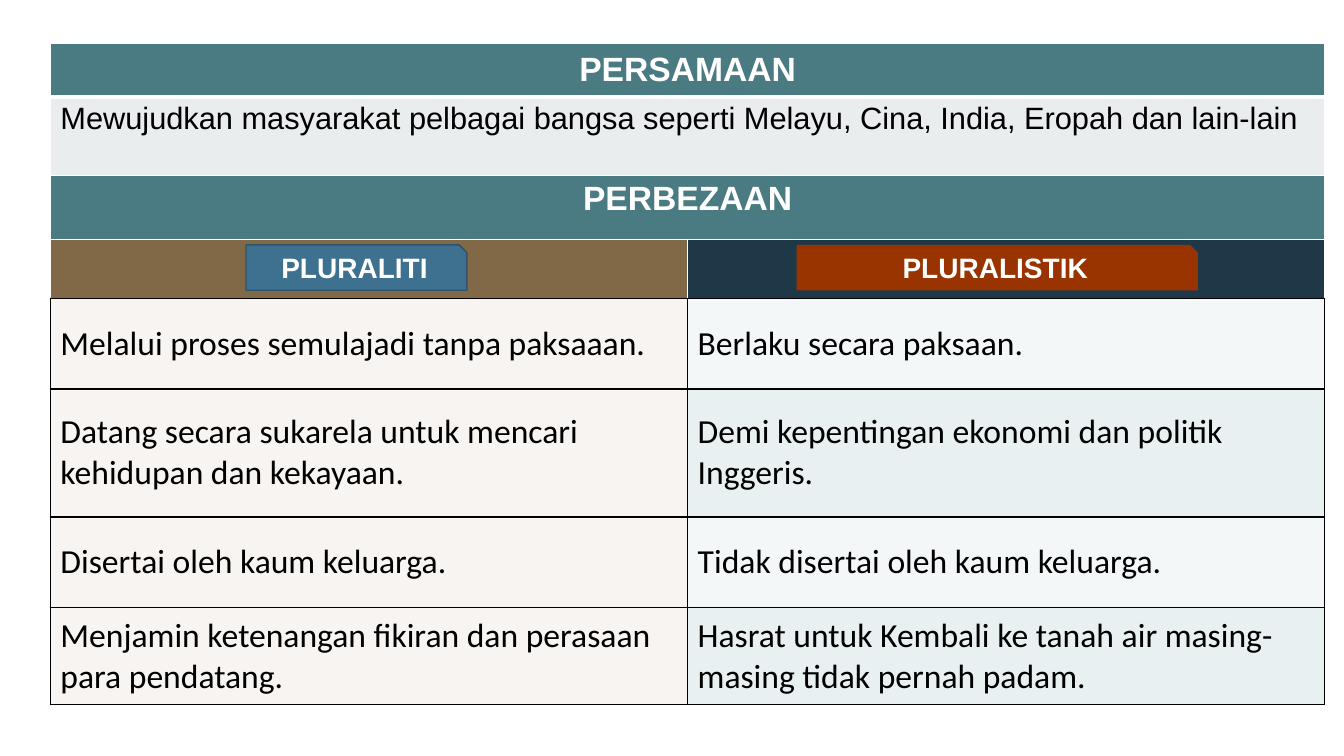
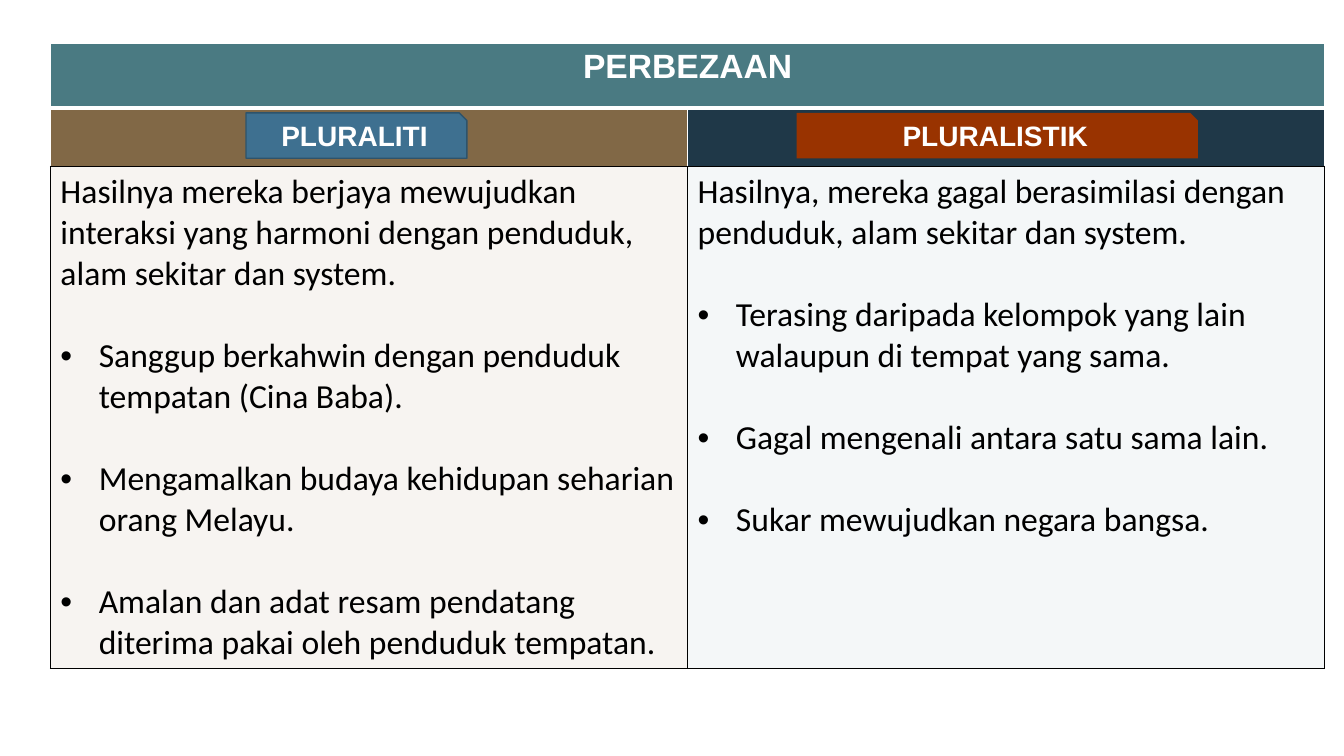
from dataclasses import dataclass, replace

from lxml.etree import SubElement
from pptx import Presentation
from pptx.dml.color import RGBColor
from pptx.enum.shapes import MSO_SHAPE as Shape
from pptx.enum.text import MSO_ANCHOR as Anchor, PP_ALIGN as Align
from pptx.oxml import parse_xml
from pptx.oxml.ns import nsdecls, qn
from pptx.util import Inches, Pt

# Shared colours
WHITE = RGBColor(0xFF, 0xFF, 0xFF)
BLACK = RGBColor(0x00, 0x00, 0x00)
TEAL = RGBColor(0x4A, 0x7A, 0x82)
GREY = RGBColor(0xE9, 0xED, 0xEE)
BROWN = RGBColor(0x81, 0x68, 0x46)
NAVY = RGBColor(0x1F, 0x38, 0x48)
CREAM = RGBColor(0xF7, 0xF4, 0xF1)
PALE = RGBColor(0xF4, 0xF7, 0xF8)
MIST = RGBColor(0xE8, 0xF0, 0xF1)
BLUE = RGBColor(0x3E, 0x70, 0x90)
BLUE_EDGE = RGBColor(0x2E, 0x53, 0x6B)
RUST = RGBColor(0x99, 0x33, 0x00)

# Shared grid, in inches
LEFT, TOP, COL_W = 0.5, 0.43, 6.32
TAG_ROW_H, TAG_H, TAG_INSET = 0.58, 0.45, 0.05
BULLET_INDENT = 0.38
BLANK_LINE = 29.3  # points: one line of 24 pt Calibri


@dataclass(frozen=True)
class Cell:
    fill: RGBColor
    lead: str = ""
    bullets: tuple[str, ...] = ()
    font: str = "Calibri"
    size: int = 24
    color: RGBColor = BLACK
    bold: bool = False
    align: Align = Align.LEFT
    anchor: Anchor = Anchor.TOP
    edge: RGBColor = BLACK
    bottom: RGBColor = BLACK
    bottom_pt: int = 1


@dataclass(frozen=True)
class Row:
    height: float
    cells: tuple[Cell, ...]  # a single cell spans both columns


@dataclass(frozen=True)
class Tag:
    text: str
    left: float
    width: float
    fill: RGBColor
    line: RGBColor | None = None


TAGS = (Tag("PLURALITI", 2.44, 2.19, BLUE, BLUE_EDGE),
        Tag("PLURALISTIK", 7.9, 3.98, RUST))
TAG_ROW = Row(TAG_ROW_H, tuple(Cell(c, edge=WHITE) for c in (BROWN, NAVY)))
BAND = Cell(TEAL, font="Arial", color=WHITE, bold=True, align=Align.CENTER,
            edge=WHITE, bottom=WHITE)


def compare(height: float, left: str, right: str, shade: RGBColor) -> Row:
    return Row(height, (Cell(CREAM, left, anchor=Anchor.MIDDLE),
                        Cell(shade, right, anchor=Anchor.MIDDLE)))


SLIDES = (
    (
        Row(0.53, (replace(BAND, lead="PERSAMAAN", anchor=Anchor.MIDDLE,
                           bottom_pt=3),)),
        Row(0.78, (Cell(GREY, "Mewujudkan masyarakat pelbagai bangsa seperti Melayu, "
                        "Cina, India, Eropah dan lain-lain",
                        font="Arial", size=22, edge=WHITE, bottom=WHITE),)),
        Row(0.64, (replace(BAND, lead="PERBEZAAN"),)),
        TAG_ROW,
        compare(0.9, "Melalui proses semulajadi tanpa paksaaan.",
                "Berlaku secara paksaan.", PALE),
        compare(1.27, "Datang secara sukarela untuk mencari kehidupan dan kekayaan.",
                "Demi kepentingan ekonomi dan politik Inggeris.", MIST),
        compare(0.9, "Disertai oleh kaum keluarga.",
                "Tidak disertai oleh kaum keluarga.", PALE),
        compare(0.96, "Menjamin ketenangan fikiran dan perasaan para pendatang.",
                "Hasrat untuk Kembali ke tanah air masing-masing tidak pernah padam.",
                MIST),
    ),
    (
        Row(0.64, (replace(BAND, lead="PERBEZAAN", bottom_pt=3),)),
        TAG_ROW,
        Row(4.97, (
            Cell(CREAM, "Hasilnya mereka berjaya mewujudkan interaksi yang harmoni "
                 "dengan penduduk, alam sekitar dan system.",
                 ("Sanggup berkahwin dengan penduduk tempatan (Cina Baba).",
                  "Mengamalkan budaya kehidupan seharian orang Melayu.",
                  "Amalan dan adat resam pendatang diterima pakai oleh penduduk "
                  "tempatan.")),
            Cell(PALE, "Hasilnya, mereka gagal berasimilasi dengan penduduk, alam "
                 "sekitar dan system.",
                 ("Terasing daripada kelompok yang lain walaupun di tempat yang sama.",
                  "Gagal mengenali antara satu sama lain.",
                  "Sukar mewujudkan negara bangsa.")),
        )),
    ),
)


def add_run(p, text: str, font: str, size: int, color: RGBColor, bold: bool) -> None:
    r = p.add_run()
    r.text = text
    r.font.name, r.font.size, r.font.bold = font, Pt(size), bold
    r.font.color.rgb = color


def set_borders(cell, style: Cell) -> None:
    tc_pr = cell._tc.get_or_add_tcPr()
    for i, side in enumerate("LRTB"):
        color, width = ((style.bottom, style.bottom_pt) if side == "B"
                        else (style.edge, 1))
        tc_pr.insert(i, parse_xml(
            f'<a:ln{side} {nsdecls("a")} w="{Pt(width)}"><a:solidFill>'
            f'<a:srgbClr val="{color}"/></a:solidFill></a:ln{side}>'))


def make_bullet(p) -> None:
    p_pr = p._p.get_or_add_pPr()
    p_pr.set("marL", str(Inches(BULLET_INDENT)))
    p_pr.set("indent", str(-Inches(BULLET_INDENT)))
    SubElement(p_pr, qn("a:buFont")).set("typeface", "Arial")
    SubElement(p_pr, qn("a:buChar")).set("char", "•")
    p.space_before = Pt(BLANK_LINE)


def fill_cell(cell, style: Cell) -> None:
    cell.vertical_anchor = style.anchor
    tf = cell.text_frame
    look = style.font, style.size, style.color, style.bold
    if style.lead:
        p = tf.paragraphs[0]
        p.alignment = style.align
        add_run(p, style.lead, *look)
    for text in style.bullets:
        p = tf.add_paragraph()
        make_bullet(p)
        add_run(p, text, *look)


def add_grid(s, rows: tuple[Row, ...]) -> None:
    height = sum(row.height for row in rows)
    table = s.shapes.add_table(len(rows), 2, Inches(LEFT), Inches(TOP),
                               Inches(2 * COL_W), Inches(height)).table
    table.first_row = table.horz_banding = False
    for col in table.columns:
        col.width = Inches(COL_W)
    for i, row in enumerate(rows):
        table.rows[i].height = Inches(row.height)
        pair = table.cell(i, 0), table.cell(i, 1)
        if len(row.cells) == 1:
            pair[0].merge(pair[1])
        for cell, style in zip(pair, row.cells * (3 - len(row.cells))):
            cell.fill.solid()
            cell.fill.fore_color.rgb = style.fill
            set_borders(cell, style)
        for cell, style in zip(pair, row.cells):
            fill_cell(cell, style)


def add_tag(s, tag: Tag, top: float) -> None:
    sp = s.shapes.add_shape(Shape.SNIP_1_RECTANGLE, Inches(tag.left), Inches(top),
                            Inches(tag.width), Inches(TAG_H))
    sp.shadow.inherit = False
    sp.fill.solid()
    sp.fill.fore_color.rgb = tag.fill
    if tag.line is None:
        sp.line.fill.background()
    else:
        sp.line.color.rgb, sp.line.width = tag.line, Pt(1)
    tf = sp.text_frame
    tf.word_wrap = True
    tf.vertical_anchor = Anchor.MIDDLE
    tf.margin_left = tf.margin_right = tf.margin_top = tf.margin_bottom = Inches(0.15)
    p = tf.paragraphs[0]
    p.alignment, p.line_spacing = Align.CENTER, 0.9
    add_run(p, tag.text, "Arial", 20, WHITE, True)


def main() -> None:
    prs = Presentation()
    prs.slide_width, prs.slide_height = Inches(13.33), Inches(7.5)
    for rows in SLIDES:
        s = prs.slides.add_slide(prs.slide_layouts[6])
        add_grid(s, rows)
        # Tags sit just inside the top of their row
        above = sum(row.height for row in rows[:rows.index(TAG_ROW)])
        for tag in TAGS:
            add_tag(s, tag, TOP + above + TAG_INSET)
    prs.save("out.pptx")


if __name__ == "__main__":
    main()
